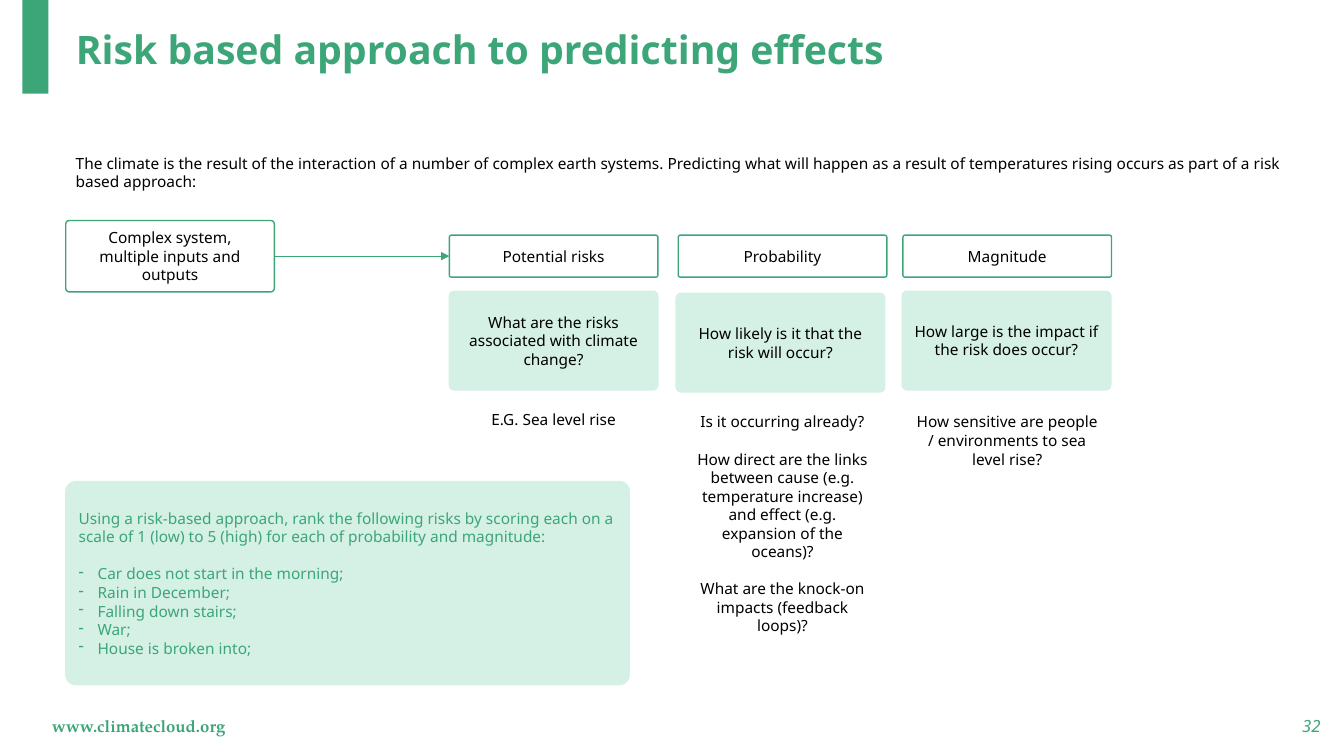
"""Build the slide on a risk based approach to predicting climate effects."""
from lxml.etree import SubElement
from pptx import Presentation
from pptx.dml.color import RGBColor
from pptx.enum.shapes import MSO_CONNECTOR, MSO_SHAPE
from pptx.enum.text import MSO_ANCHOR, MSO_AUTO_SIZE, PP_ALIGN
from pptx.oxml.ns import qn
from pptx.util import Pt

GREEN = RGBColor(0x3C, 0xA6, 0x79)
MINT = RGBColor(0xD5, 0xF0, 0xE5)
BLACK = RGBColor(0, 0, 0)

SANS, SERIF = "Noto Sans", "TeX Gyre Pagella"
BODY = {"name": SANS, "size": Pt(11)}
TITLE = {"name": SANS, "size": Pt(28), "bold": True}
PAGE = {"name": SANS, "size": Pt(12), "italic": True}
SITE = {"name": SERIF, "size": Pt(12), "bold": True}
LINE_HEIGHT = Pt(13.25)
COLUMN_WIDTH = 149

COLUMNS = [
    {"header": ("Potential risks", 321, 168),
     "question": ("What are the risks associated with climate change?", 321, 208),
     "details": (["E.G. Sea level rise"], 321, 30)},
    {"header": ("Probability", 484.5, 168),
     "question": ("How likely is it that the risk will occur?", 483, 209.5),
     "details": (["Is it occurring already?",
                  "How direct are the links between cause (e.g. temperature "
                  "increase) and effect (e.g. expansion of the oceans)?",
                  "What are the knock-on impacts (feedback loops)?"], 484.5, 185)},
    {"header": ("Magnitude", 645, 168),
     "question": ("How large is the impact if the risk does occur?", 644.5, 208),
     "details": (["How sensitive are people / environments to sea level rise?"],
                 645, 155.5)},
]
RISKS = ["Car does not start in the morning;", "Rain in December;",
         "Falling down stairs;", "War;", "House is broken into;"]


def set_attrs(obj, values):
    """Set each named attribute of an object."""
    for name, value in values.items():
        setattr(obj, name, value)


def add_bullet(p):
    """Give a paragraph a hanging dash bullet."""
    pPr = p._p.get_or_add_pPr()
    pPr.set("marL", str(Pt(13.5)))
    pPr.set("indent", str(-Pt(13.5)))
    SubElement(pPr, qn("a:buChar"), char="-")


def write(tf, texts, font=BODY, color=BLACK, align=PP_ALIGN.LEFT,
          anchor=MSO_ANCHOR.MIDDLE, spacing=LINE_HEIGHT, gap=LINE_HEIGHT, bullets=()):
    """Fill a text frame with paragraphs, then with bullets after a gap."""
    set_attrs(tf, {"word_wrap": True, "auto_size": MSO_AUTO_SIZE.NONE,
                   "vertical_anchor": anchor})
    for i, text in enumerate([*texts, *bullets]):
        p = tf.add_paragraph() if i else tf.paragraphs[0]
        set_attrs(p, {"alignment": align, "line_spacing": spacing,
                      "space_before": gap if 0 < i <= len(texts) else Pt(0)})
        if i >= len(texts):
            add_bullet(p)
        r = p.add_run()
        r.text = text
        set_attrs(r.font, font)
        r.font.color.rgb = color


def add_text(s, box, text, **style):
    """Add a text box with one paragraph."""
    sp = s.shapes.add_textbox(*map(Pt, box))
    write(sp.text_frame, [text], **style)


def add_box(s, box, fill=None, line=None, kind=MSO_SHAPE.ROUNDED_RECTANGLE):
    """Add a shape with optional fill and outline."""
    sp = s.shapes.add_shape(kind, *map(Pt, box))
    sp.shadow.inherit = False
    if kind == MSO_SHAPE.ROUNDED_RECTANGLE:
        sp.adjustments[0] = 0.05
    if fill is None:
        sp.fill.background()
    else:
        sp.fill.solid()
        sp.fill.fore_color.rgb = fill
    if line is None:
        sp.line.fill.background()
    else:
        sp.line.color.rgb = line
        sp.line.width = Pt(1)
    return sp


def add_card(s, box, texts, fill=None, line=None, align=PP_ALIGN.CENTER, **style):
    """Add a rounded box with text."""
    sp = add_box(s, box, fill, line)
    write(sp.text_frame, texts, align=align, **style)
    return sp


def add_arrow(s, start, end):
    """Join the right side of one box to the left side of another."""
    cx = s.shapes.add_connector(MSO_CONNECTOR.STRAIGHT, 0, 0, 0, 0)
    cx.begin_connect(start, 3)
    cx.end_connect(end, 1)
    cx.line.color.rgb = GREEN
    cx.line.width = Pt(0.5)
    SubElement(cx.line._get_or_add_ln(), qn("a:tailEnd"), type="triangle")
    SubElement(cx._element.spPr, qn("a:effectLst"))


def add_column(s, column):
    """Add a header, question and details, and return the header."""
    text, left, top = column["header"]
    header = add_card(s, (left, top, COLUMN_WIDTH, 30), [text], line=GREEN)
    text, left, top = column["question"]
    add_card(s, (left, top, COLUMN_WIDTH, 70.5), [text], MINT, MINT)
    texts, left, height = column["details"]
    add_card(s, (left, 289, COLUMN_WIDTH, height), texts, anchor=MSO_ANCHOR.TOP)
    return header


def add_title(s, text):
    """Place and format the title placeholder."""
    sp = s.shapes.title
    set_attrs(sp, {"left": Pt(47), "top": Pt(9.5),
                   "width": Pt(772.5), "height": Pt(54.5)})
    write(sp.text_frame, [text], font=TITLE, color=GREEN, spacing=0.9)


def main():
    """Build and save the slide."""
    prs = Presentation()
    set_attrs(prs, {"slide_width": Pt(960), "slide_height": Pt(540)})
    s = prs.slides.add_slide(prs.slide_layouts[5])

    add_box(s, (16, 0, 18.5, 67), GREEN, kind=MSO_SHAPE.RECTANGLE)
    add_title(s, "Risk based approach to predicting effects")
    add_text(s, (47, 106.5, 876, 60.5),
             "The climate is the result of the interaction of a number of complex "
             "earth systems. Predicting what will happen as a result of "
             "temperatures rising occurs as part of a risk based approach:",
             anchor=MSO_ANCHOR.TOP)

    system = add_card(s, (47, 157.5, COLUMN_WIDTH, 51),
                      ["Complex system, multiple inputs and outputs"], line=GREEN)
    headers = [add_column(s, column) for column in COLUMNS]
    add_arrow(s, system, headers[0])

    add_card(s, (47, 344, 402.5, 145),
             ["Using a risk-based approach, rank the following risks by scoring "
              "each on a scale of 1 (low) to 5 (high) for each of probability "
              "and magnitude:"],
             MINT, MINT, PP_ALIGN.LEFT, color=GREEN, bullets=RISKS)
    # gap before the list
    s.shapes[-1].text_frame.paragraphs[1].space_before = LINE_HEIGHT

    add_text(s, (30, 504, 324, 29), "www.climatecloud.org",
             font=SITE, color=GREEN, spacing=None)
    add_text(s, (734.5, 504, 216, 29), "32", font=PAGE, color=GREEN,
             align=PP_ALIGN.RIGHT, spacing=None)
    prs.save("out.pptx")


if __name__ == "__main__":
    main()
